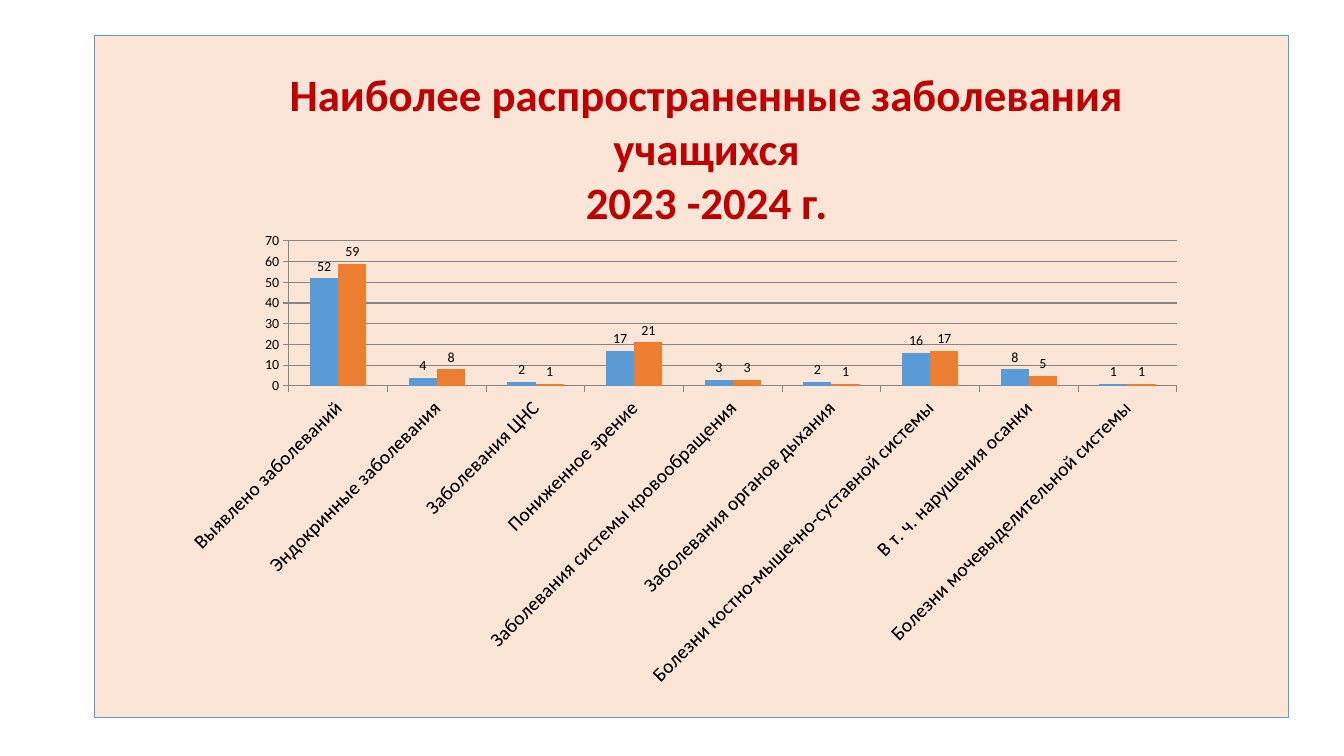
from typing import NamedTuple

from pptx import Presentation
from pptx import util as u
from pptx.chart.data import CategoryChartData
from pptx.dml.color import RGBColor
from pptx.enum import chart as ch, shapes, text

WIDE, HIGH = u.Inches(13.33), u.Inches(7.5)
FACE = "Calibri"
BLUE, GREY, BLACK = "5B9BD5", "868686", "000000"


class Box(NamedTuple):
    left: float
    top: float
    width: float
    height: float


class Series(NamedTuple):
    name: str
    color: str
    values: tuple[int, ...]


PANEL = Box(7.05, 4.67, 88.82, 90.27)
TITLE = Box(16.65, 11.73, 71.87, 15.6)
CHART = Box(12.53, 30.67, 76.59, 60.13)

NAMES = (
    "Выявлено заболеваний",
    "Эндокринные заболевания",
    "Заболевания ЦНС",
    "Пониженное зрение",
    "Заболевания системы кровообращения",
    "Заболевания органов дыхания",
    "Болезни костно-мышечно-суставной системы",
    "В т. ч. нарушения осанки",
    "Болезни мочевыделительной системы",
)
SERIES = (
    Series("Series 1", BLUE, (52, 4, 2, 17, 3, 2, 16, 8, 1)),
    Series("Series 2", "ED7D31", (59, 8, 1, 21, 3, 1, 17, 5, 1)),
)


def rgb(code: str) -> RGBColor:
    return RGBColor.from_string(code)


def place(box: Box) -> tuple[int, ...]:
    sides = (WIDE, HIGH, WIDE, HIGH)
    return tuple(int(share * side / 100) for share, side in zip(box, sides))


def style(font, size: float, color: str = BLACK, bold: bool = False) -> None:
    font.name, font.size, font.bold = FACE, u.Pt(size), bold
    font.color.rgb = rgb(color)


def write(shape, lines: tuple[str, ...], *, size: float, color: str, bold: bool) -> None:
    frame = shape.text_frame
    frame.word_wrap = True
    frame.auto_size = text.MSO_AUTO_SIZE.NONE
    frame.vertical_anchor = text.MSO_ANCHOR.MIDDLE
    frame.text = "\n".join(lines)
    for para in frame.paragraphs:
        para.alignment = text.PP_ALIGN.CENTER
        para.line_spacing = 1.0
        style(para.runs[0].font, size, color, bold)


def add_panel(slide) -> None:
    panel = slide.shapes.add_shape(shapes.MSO_SHAPE.RECTANGLE, *place(PANEL))
    panel.shadow.inherit = False
    panel.fill.solid()
    panel.fill.fore_color.rgb = rgb("FBE5D6")
    panel.line.color.rgb = rgb(BLUE)
    panel.line.width = u.Pt(0.5)
    slide.shapes._spTree.insert(2, panel._element)


def add_title(slide) -> None:
    title = slide.shapes.title
    title.left, title.top, title.width, title.height = place(TITLE)
    lines = ("Наиболее распространенные заболевания учащихся", "2023 -2024 г.")
    write(title, lines, size=32, color="C00000", bold=True)


def add_chart(slide) -> None:
    data = CategoryChartData()
    data.categories = NAMES
    for item in SERIES:
        data.add_series(item.name, item.values)
    kind = ch.XL_CHART_TYPE.COLUMN_CLUSTERED
    chart = slide.shapes.add_chart(kind, *place(CHART), data).chart
    chart.has_title = chart.has_legend = False
    style(chart.font, 10)

    plot = chart.plots[0]
    plot.gap_width, plot.overlap = 150, 0
    plot.vary_by_categories = False
    for bars, item in zip(plot.series, SERIES):
        bars.format.fill.solid()
        bars.format.fill.fore_color.rgb = rgb(item.color)
        marks = bars.data_labels
        marks.show_value = True
        marks.position = ch.XL_LABEL_POSITION.OUTSIDE_END
        style(marks.font, 10)

    names, scale = chart.category_axis, chart.value_axis
    for axis, size in ((names, 14), (scale, 10)):
        axis.major_tick_mark = ch.XL_TICK_MARK.OUTSIDE
        axis.minor_tick_mark = ch.XL_TICK_MARK.NONE
        axis.format.line.color.rgb = rgb(GREY)
        style(axis.tick_labels.font, size)
    scale.minimum_scale, scale.maximum_scale, scale.major_unit = 0, 70, 10
    scale.has_major_gridlines = True
    scale.major_gridlines.format.line.color.rgb = rgb(GREY)


def main() -> None:
    deck = Presentation()
    deck.slide_width, deck.slide_height = WIDE, HIGH
    slide = deck.slides.add_slide(deck.slide_layouts[5])
    add_panel(slide)
    add_title(slide)
    add_chart(slide)
    deck.save("out.pptx")


if __name__ == "__main__":
    main()
